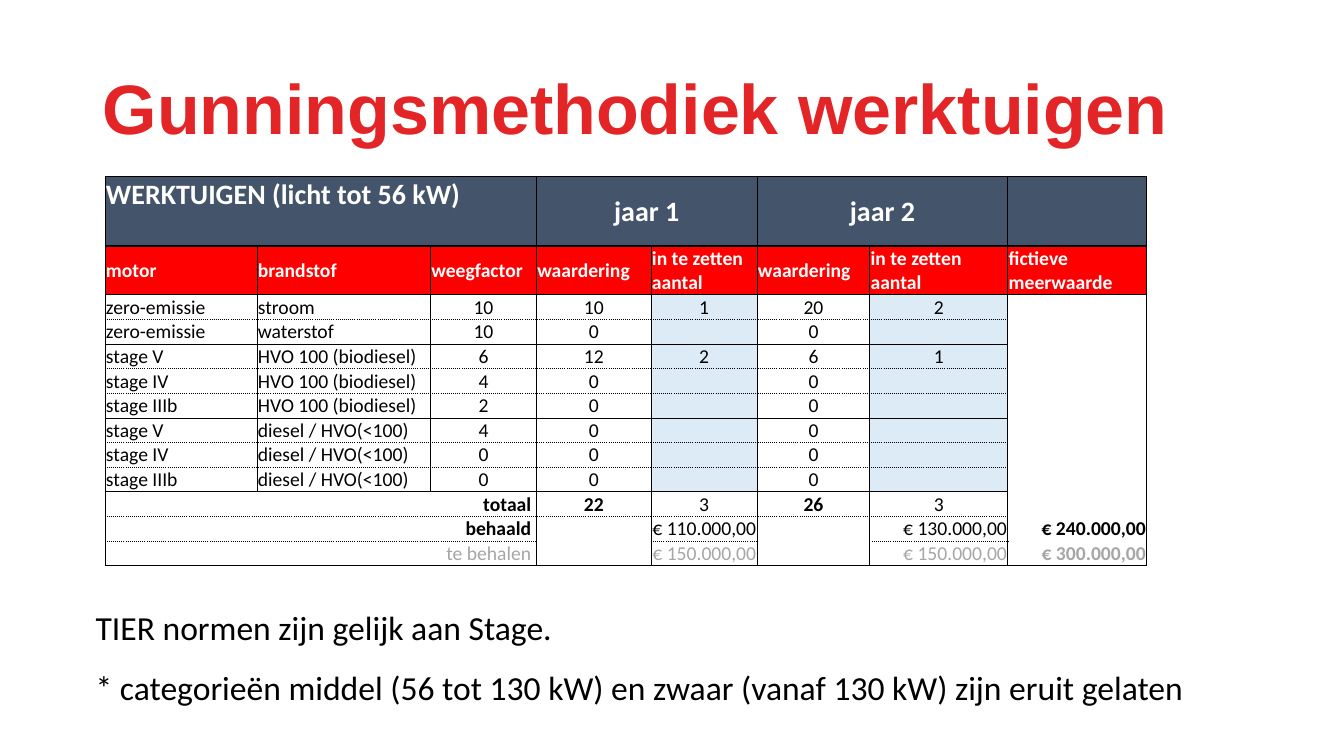
from lxml.etree import SubElement
from pptx import Presentation
from pptx.dml.color import RGBColor
from pptx.enum.text import MSO_ANCHOR as ANCHOR, PP_ALIGN as ALIGN
from pptx.oxml.ns import qn
from pptx.util import Cm, Pt

ROWS = [
    ["WERKTUIGEN (licht tot 56 kW)", "", "", "jaar 1", "", "jaar 2", "", ""],
    ["motor", "brandstof", "weegfactor", "waardering", "in te zetten aantal",
     "waardering", "in te zetten aantal", "fictieve meerwaarde"],
    ["zero-emissie", "stroom", "10", "10", "1", "20", "2", ""],
    ["zero-emissie", "waterstof", "10", "0", "", "0", "", ""],
    ["stage V", "HVO 100 (biodiesel)", "6", "12", "2", "6", "1", ""],
    ["stage IV", "HVO 100 (biodiesel)", "4", "0", "", "0", "", ""],
    ["stage IIIb", "HVO 100 (biodiesel)", "2", "0", "", "0", "", ""],
    ["stage V", "diesel / HVO(<100)", "4", "0", "", "0", "", ""],
    ["stage IV", "diesel / HVO(<100)", "0", "0", "", "0", "", ""],
    ["stage IIIb", "diesel / HVO(<100)", "0", "0", "", "0", "", ""],
    ["", "", "totaal ", "22", "3", "26", "3", ""],
    ["", "", "behaald ", "", "€ 110.000,00", "", "€ 130.000,00", "€ 240.000,00"],
    ["", "", "te behalen ", "", "€ 150.000,00", "", "€ 150.000,00", "€ 300.000,00"],
]
WIDTHS = [3.83, 4.37, 2.67, 2.89, 2.67, 2.84, 3.48, 3.5]
HEIGHTS = [1.75, 1.23] + [0.62] * 11
HEADER, SUBHEADER, TOTAL, ACHIEVED, ACHIEVABLE = 0, 1, 10, 11, 12
BOLD_CELLS = {(TOTAL, 2), (TOTAL, 3), (TOTAL, 5), (ACHIEVED, 2)}


def rgb(value):
    return RGBColor.from_string(value)


def cell_fill(row, col):
    if row == HEADER:
        return "44546A"
    if row == SUBHEADER:
        return "FF0000"
    return "DDEBF7" if row < TOTAL and col in (4, 6) else None


def cell_align(row, col):
    if row >= ACHIEVED or (row, col) == (TOTAL, 2):
        return ALIGN.RIGHT
    if row == SUBHEADER or col == 0 or (row > SUBHEADER and col == 1):
        return ALIGN.LEFT
    return ALIGN.CENTER


def cell_anchor(row, col):
    if (row, col) == (HEADER, 0):
        return ANCHOR.TOP
    return ANCHOR.MIDDLE if row < 2 and (row, col) != (SUBHEADER, 7) else ANCHOR.BOTTOM


def vertical_edge(row, edge):
    if row >= TOTAL and edge in (1, 2):
        return None
    return (1 if edge in (0, 3, 5, 7, 8) else 0.5), "solid"


def horizontal_edge(edge, col):
    if (col == 7 and 2 < edge < 13) or (edge == ACHIEVABLE and col in (3, 5)):
        return None
    if edge in (0, 1, 2, 10, 13):
        return 1, "solid"
    return 0.5, "solid" if edge in (4, 7) else "sysDot"


class Deck:
    """Holds the style and the current slide."""

    def __init__(self):
        self.prs = Presentation()
        self.prs.slide_width, self.prs.slide_height = Cm(33.87), Cm(19.05)
        self.s = self.prs.slides.add_slide(self.prs.slide_layouts[6])

    def format(self, p, size, color, bold=False, font="Calibri"):
        for r in p.runs:
            r.font.name, r.font.size, r.font.bold = font, Pt(size), bold
            r.font.color.rgb = rgb(color)

    def text(self, box, text, size, color, spacing, **style):
        tf = self.s.shapes.add_textbox(*map(Cm, box)).text_frame
        tf.word_wrap = True
        tf.text = text
        p = tf.paragraphs[0]
        p.line_spacing = spacing
        self.format(p, size, color, **style)

    def border(self, cell, side, edge):
        tcPr = cell._tc.get_or_add_tcPr()
        ln = SubElement(tcPr, qn(f"a:ln{side}"))
        if edge is None:
            SubElement(ln, qn("a:noFill"))
            return
        width, dash = edge
        ln.set("w", str(Pt(width)))
        SubElement(SubElement(ln, qn("a:solidFill")), qn("a:srgbClr")).set("val", "000000")
        SubElement(ln, qn("a:prstDash")).set("val", dash)

    def cell(self, cell, row, col):
        cell.margin_left = cell.margin_right = cell.margin_top = Cm(0.02)
        cell.margin_bottom = 0
        cell.vertical_anchor = cell_anchor(row, col)
        cell.text_frame.text = ROWS[row][col]
        p = cell.text_frame.paragraphs[0]
        p.alignment = cell_align(row, col)
        size = 20 if row == HEADER else 14
        color = "FFFFFF" if row < 2 else "A6A6A6" if row == ACHIEVABLE else "000000"
        self.format(p, size, color, row < 2 or col == 7 or (row, col) in BOLD_CELLS)
        if not p.runs:
            SubElement(p._p, qn("a:endParaRPr")).set("sz", str(size * 100))
        self.border(cell, "L", vertical_edge(row, col))
        self.border(cell, "R", vertical_edge(row, col + 1))
        self.border(cell, "T", horizontal_edge(row, col))
        self.border(cell, "B", horizontal_edge(row + 1, col))
        fill = cell_fill(row, col)
        if fill:
            cell.fill.solid()
            cell.fill.fore_color.rgb = rgb(fill)
        else:
            cell.fill.background()

    def table(self, left, top):
        frame = self.s.shapes.add_table(len(HEIGHTS), len(WIDTHS), Cm(left), Cm(top),
                                        Cm(sum(WIDTHS)), Cm(sum(HEIGHTS)))
        table = frame.table
        table.first_row = table.horz_banding = False
        style = table._tbl.tblPr.find(qn("a:tableStyleId"))
        style.text = "{2D5ABB26-0587-4C30-8999-92F81FD0307C}"
        for column, width in zip(table.columns, WIDTHS):
            column.width = Cm(width)
        for row, height in enumerate(HEIGHTS):
            table.rows[row].height = Cm(height)
            for col in range(len(WIDTHS)):
                self.cell(table.cell(row, col), row, col)
        for first, last in ((0, 2), (3, 4), (5, 6)):
            table.cell(HEADER, first).merge(table.cell(HEADER, last))


def main():
    deck = Deck()
    deck.text((2.34, 1.73, 31.22, 2.72), "Gunningsmethodiek werktuigen", 50, "E32527", 0.9,
              bold=True, font="Arial")
    deck.table(2.65, 4.45)
    deck.text((2.16, 14.66, 30.3, 4.72),
              "TIER normen zijn gelijk aan Stage.\v"
              "* categorieën middel (56 tot 130 kW) en zwaar (vanaf 130 kW) zijn eruit gelaten",
              24, "000000", 1.5)
    deck.prs.save("out.pptx")


if __name__ == "__main__":
    main()
